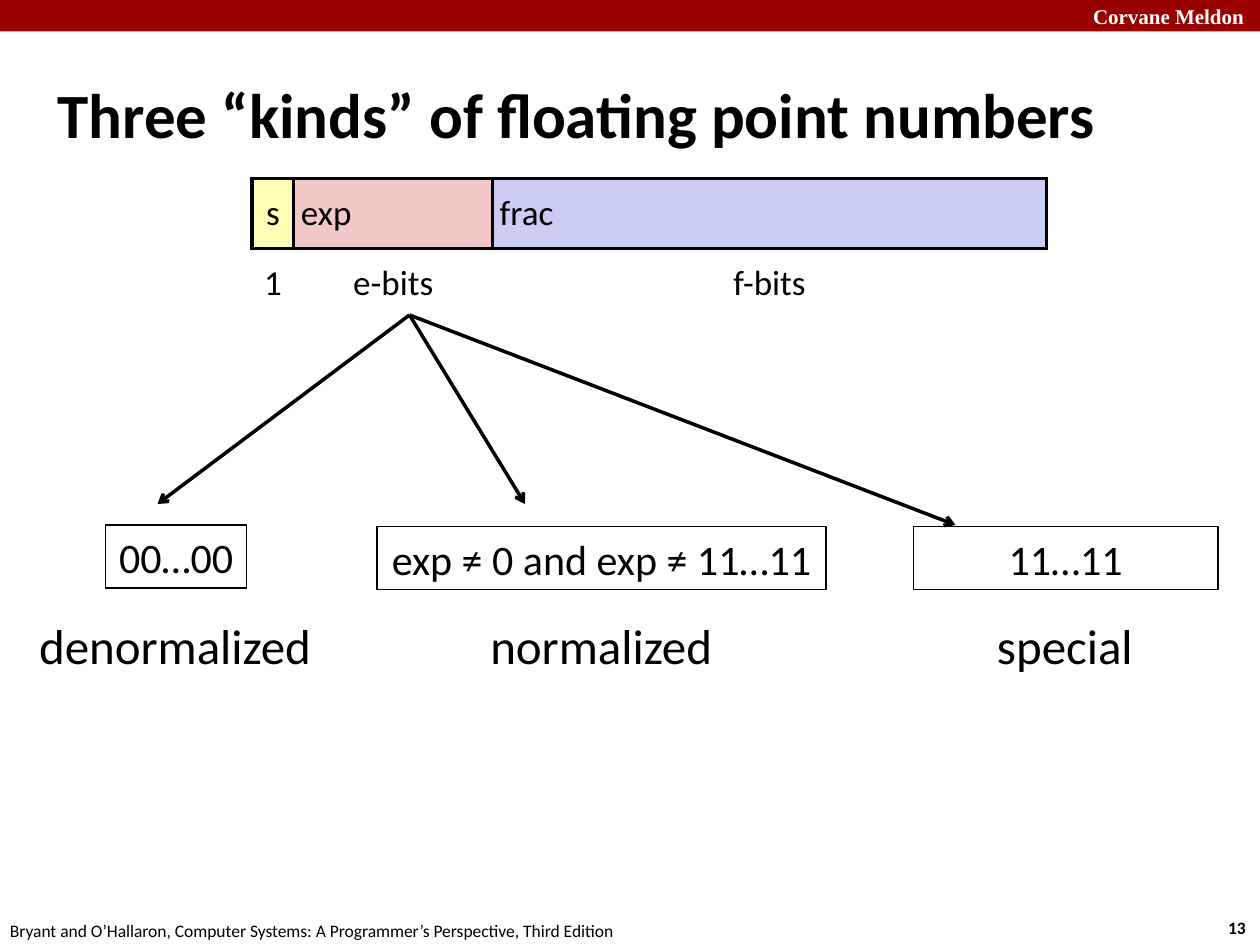
import pptx
import pptx.util
import pptx.dml.color
import pptx.enum.shapes
import pptx.enum.text
import pptx.oxml
import pptx.oxml.ns

Pt = pptx.util.Pt
ALIGN = pptx.enum.text.PP_ALIGN
MIDDLE = pptx.enum.text.MSO_ANCHOR.MIDDLE
RECT = pptx.enum.shapes.MSO_SHAPE.RECTANGLE
STRAIGHT = pptx.enum.shapes.MSO_CONNECTOR.STRAIGHT
COLORS = {
    "ink": "000000",
    "paper": "FFFFFF",
    "band": "990000",
    "sign": "FFFEB2",
    "exp": "F1C7C7",
    "frac": "CBCCF3",
}


def color(name):
    """Return the named colour."""
    return pptx.dml.color.RGBColor.from_string(COLORS[name])


def node(tag, inner="", **attrs):
    """Build one drawing element from its tag, content and attributes."""
    pairs = "".join(f' {key}="{value}"' for key, value in attrs.items())
    space = pptx.oxml.ns.nsdecls("a")
    return pptx.oxml.parse_xml(f"<a:{tag} {space}{pairs}>{inner}</a:{tag}>")


def write(frame, text, size=24, font="Calibri", ink="ink", bold=False, align="CENTER"):
    """Put formatted text in a frame."""
    para = frame.paragraphs[0]
    para.alignment = getattr(ALIGN, align)
    run = para.add_run()
    run.text = text
    run.font.size = Pt(size)
    run.font.name = font
    run.font.bold = bold
    run.font.color.rgb = color(ink)


def label(slide, box, text, wrap=False, inset=None, anchor=None, **style):
    """Add a text box."""
    frame = slide.shapes.add_textbox(*map(Pt, box)).text_frame
    frame.word_wrap = wrap
    if inset is not None:
        frame.margin_left = frame.margin_right = Pt(inset)
        frame.margin_top = frame.margin_bottom = Pt(inset)
    if anchor is not None:
        frame.vertical_anchor = anchor
    write(frame, text, **style)


def block(slide, box, fill=None, line=None):
    """Add a plain rectangle."""
    shape = slide.shapes.add_shape(RECT, *map(Pt, box))
    shape.shadow.inherit = False
    if fill:
        shape.fill.solid()
        shape.fill.fore_color.rgb = color(fill)
    else:
        shape.fill.background()
    if line:
        shape.line.color.rgb = color("ink")
        shape.line.width = Pt(line)
    else:
        shape.line.fill.background()
    return shape


def arrow(slide, start, end):
    """Draw an arrow between two points."""
    link = slide.shapes.add_connector(STRAIGHT, *map(Pt, start + end))
    link.line.color.rgb = color("ink")
    link.line.width = Pt(2)
    link.line._get_or_add_ln().append(node("tailEnd", type="arrow"))
    link._element.spPr.append(node("effectLst"))


def border(cell, sides):
    """Rule the given sides of a cell and clear the others."""
    solid = f'<a:solidFill><a:srgbClr val="{COLORS["ink"]}"/></a:solidFill>'
    props = cell._tc.get_or_add_tcPr()
    for spot, side in enumerate("LRTB"):
        inner = solid if side in sides else "<a:noFill/>"
        props.insert(spot, node("ln" + side, inner, w=Pt(2)))


def header(slide, box):
    """Draw the top band with the school name."""
    left, top, width, height = box
    block(slide, box, fill="band")
    label(slide, (left + width - 162, top - 1.5, 160, 21.5), "Corvane Meldon",
          wrap=True, size=12, font="Times New Roman", ink="paper", bold=True,
          align="RIGHT")


def footer(slide, box):
    """Place the book credit and the page number."""
    left, top, width, height = box
    label(slide, (left - 5, top + 1.5, 366, height),
          "Bryant and O’Hallaron, Computer Systems: A Programmer’s Perspective, Third Edition",
          size=10)
    label(slide, (left + width - 26.5, top, 26.5, height), "13", size=10, bold=True)


def layout(slide, box):
    """Draw the table of bit fields."""
    left, top, width, height = box
    fields = [
        ("s", "1", "sign", 24, "CENTER"),
        ("exp", "e-bits", "exp", 113.5, "LEFT"),
        ("frac", "f-bits", "frac", width - 137.5, "LEFT"),
    ]
    table = slide.shapes.add_table(2, len(fields), *map(Pt, box)).table
    table.first_row = table.horz_banding = False
    for row in table.rows:
        row.height = Pt(height / 2)
    for col, (name, bits, fill, wide, align) in enumerate(fields):
        table.columns[col].width = Pt(wide)
        head, foot = table.cell(0, col), table.cell(1, col)
        head.fill.solid()
        head.fill.fore_color.rgb = color(fill)
        foot.fill.background()
        for cell, text, side, rule in ((head, name, align, "LRTB"), (foot, bits, "CENTER", "T")):
            border(cell, rule)
            cell.vertical_anchor = MIDDLE
            cell.margin_left = cell.margin_right = Pt(4)
            cell.margin_top = cell.margin_bottom = Pt(4)
            write(cell.text_frame, text, size=20, align=side)


def kinds(slide, box):
    """Draw the three cases with their arrows, boxes and names."""
    left, top, width, height = box
    cases = [
        ("00…00", "denormalized", 45.5, 120, 80.5, 75, 108, 85, 171),
        ("exp ≠ 0 and exp ≠ 11…11", "normalized", 200.5, 121, 256.5, 285, 108, 328.5, 143),
        ("11…11", "special", 507, 121, 174, 531, 120, 593.5, 93),
    ]
    for test, name, near, drop, wide, tip, fall, mid, span in cases:
        arrow(slide, (left + 219, top), (left + tip, top + fall))
        shape = block(slide, (left + near, top + drop, wide, 36), line=0.75)
        shape.text_frame.word_wrap = False
        write(shape.text_frame, test)
        label(slide, (left + mid - span / 2, top + height - 41, span, 41), name, size=28)


def build():
    """Build and save the slide."""
    deck = pptx.Presentation()
    deck.slide_width, deck.slide_height = Pt(720), Pt(540)
    slide = deck.slides.add_slide(deck.slide_layouts[6])
    footer(slide, (0, 520.5, 720, 19.5))
    header(slide, (0, 0, 720, 18))
    label(slide, (30, 20, 660, 90), "Three “kinds” of floating point numbers",
          wrap=True, inset=3, anchor=MIDDLE, size=36, bold=True, align="LEFT")
    layout(slide, (144, 102, 454, 80))
    kinds(slide, (15, 180, 690, 209))
    deck.save("out.pptx")


if __name__ == "__main__":
    build()
